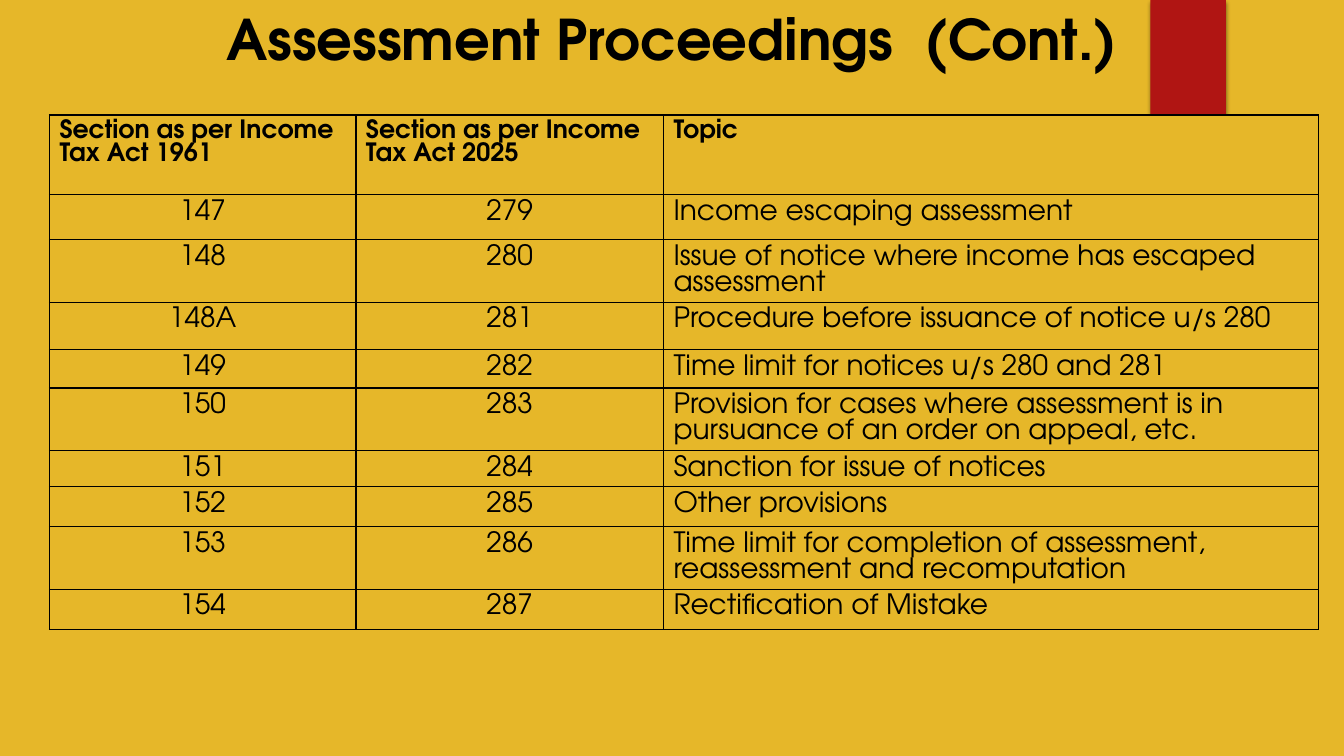
from lxml import etree
from pptx import Presentation
from pptx.dml.color import RGBColor
from pptx.enum.shapes import MSO_SHAPE
from pptx.enum.text import MSO_ANCHOR, PP_ALIGN
from pptx.oxml import parse_xml
from pptx.util import Inches, Pt

RECTANGLE = MSO_SHAPE.RECTANGLE
TOP = MSO_ANCHOR.TOP
LEFT, CENTER = PP_ALIGN.LEFT, PP_ALIGN.CENTER

TITLE = "Assessment Proceedings  (Cont.)"
HEADINGS = (
    "Section as per Income Tax Act 1961",
    "Section as per Income Tax Act 2025",
    "Topic",
)
SECTIONS = [
    ("147", "279", "Income escaping assessment"),
    ("148", "280", "Issue of notice where income has escaped assessment"),
    ("148A", "281", "Procedure before issuance of notice u/s 280"),
    ("149", "282", "Time limit for notices u/s 280 and 281"),
    ("150", "283", "Provision for cases where assessment is in pursuance of an order on appeal, etc."),
    ("151", "284", "Sanction for issue of notices"),
    ("152", "285", "Other provisions"),
    ("153", "286", "Time limit for completion of assessment, reassessment and recomputation"),
    ("154", "287", "Rectification of Mistake"),
]
COLUMN_WIDTHS = (3.04, 3.05, 6.5)
ROW_HEIGHTS = (0.79, 0.45, 0.62, 0.47, 0.38, 0.62, 0.35, 0.4, 0.62, 0.4)
TABLE_LEFT, TABLE_TOP = 0.49, 1.14

FONT = "TeX Gyre Adventor"
GOLD = RGBColor(0xE6, 0xB7, 0x29)
RED = RGBColor(0xB0, 0x15, 0x13)
BLACK = RGBColor(0, 0, 0)
DRAWING = "http://schemas.openxmlformats.org/drawingml/2006/main"
RIBBON_SHADOW = (
    f'<a:effectLst xmlns:a="{DRAWING}"><a:outerShdw blurRad="38100" dist="25400" dir="5400000">'
    '<a:srgbClr val="000000"><a:alpha val="45000"/></a:srgbClr></a:outerShdw></a:effectLst>'
)


def write(frame, text, size, bold, align):
    frame.text = text
    paragraph = frame.paragraphs[0]
    paragraph.alignment = align
    for run in paragraph.runs:
        run.font.name = FONT
        run.font.size = Pt(size)
        run.font.bold = bold
        run.font.color.rgb = BLACK
    return paragraph


def add_borders(cell):
    properties = cell._tc.get_or_add_tcPr()
    for position, side in enumerate(("lnL", "lnR", "lnT", "lnB")):
        border = etree.Element(f"{{{DRAWING}}}{side}", w=str(Pt(1)))
        fill = etree.SubElement(border, f"{{{DRAWING}}}solidFill")
        etree.SubElement(fill, f"{{{DRAWING}}}srgbClr", val=str(BLACK))
        properties.insert(position, border)


def add_ribbon(slide):
    ribbon = slide.shapes.add_shape(RECTANGLE, Inches(11.41), 0, Inches(0.75), Inches(1.25))
    ribbon.fill.solid()
    ribbon.fill.fore_color.rgb = RED
    ribbon.line.fill.background()
    ribbon._element.spPr.append(parse_xml(RIBBON_SHADOW))


def add_title(slide, width):
    frame = slide.shapes.add_textbox(0, 0, width, Inches(1.33)).text_frame
    frame.word_wrap = True
    frame.vertical_anchor = TOP
    write(frame, TITLE, 40, True, CENTER)


def add_sections(slide):
    rows = [HEADINGS, *SECTIONS]
    table = slide.shapes.add_table(
        len(rows), len(HEADINGS), Inches(TABLE_LEFT), Inches(TABLE_TOP),
        Inches(sum(COLUMN_WIDTHS)), Inches(sum(ROW_HEIGHTS)),
    ).table
    for column, width in zip(table.columns, COLUMN_WIDTHS):
        column.width = Inches(width)
    for row, height in zip(table.rows, ROW_HEIGHTS):
        row.height = Inches(height)
    for r, texts in enumerate(rows):
        heading = r == 0
        for c, text in enumerate(texts):
            cell = table.cell(r, c)
            cell.fill.solid()
            cell.fill.fore_color.rgb = GOLD
            align = LEFT if heading or c == 2 else CENTER
            paragraph = write(cell.text_frame, text, 18 if heading else 20, heading, align)
            paragraph.line_spacing = Pt(16.5 if heading else 18.5)
            add_borders(cell)


def main():
    deck = Presentation()
    deck.slide_width, deck.slide_height = Inches(13.33), Inches(7.5)
    slide = deck.slides.add_slide(deck.slide_layouts[6])
    slide.background.fill.solid()
    slide.background.fill.fore_color.rgb = GOLD
    add_ribbon(slide)
    add_title(slide, deck.slide_width)
    add_sections(slide)
    deck.save("out.pptx")


if __name__ == "__main__":
    main()
